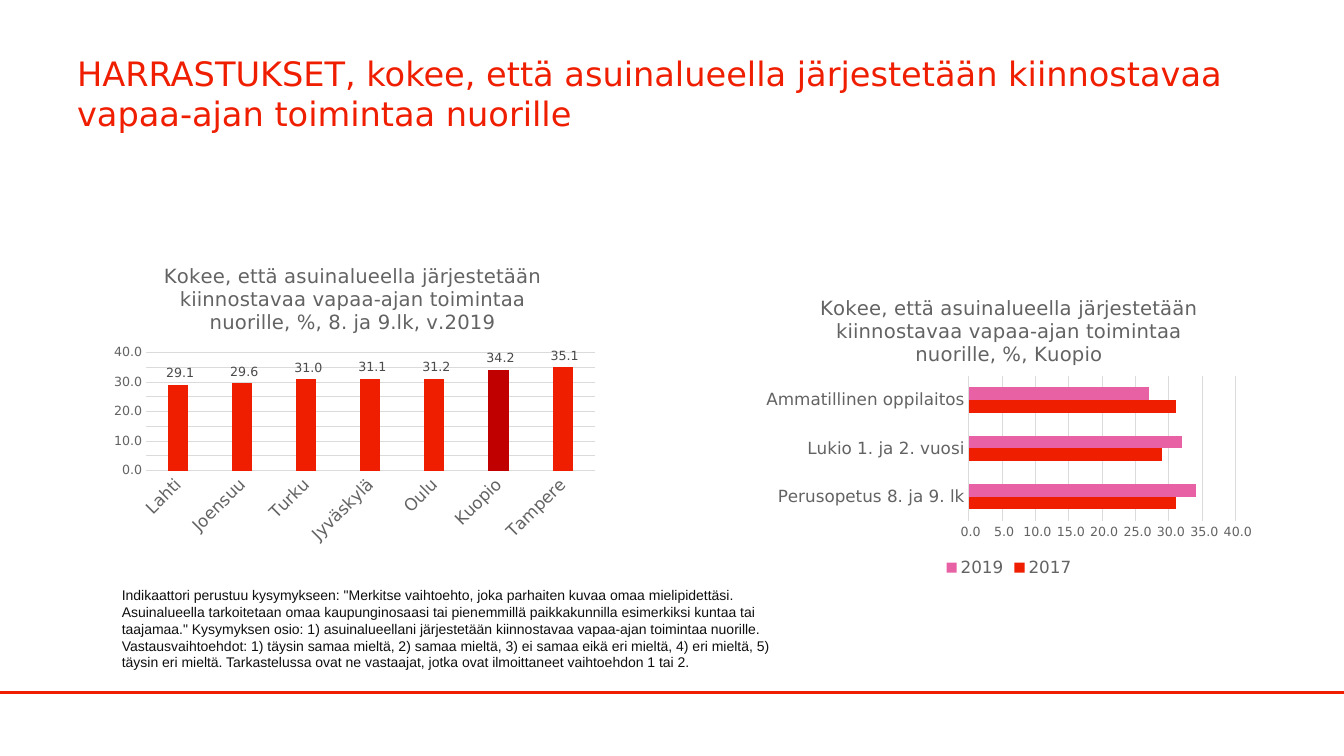
from pptx import Presentation
from pptx import util as u
from pptx.chart import data as chart_data
from pptx.dml.color import RGBColor
from pptx.enum import chart as kinds, shapes, text
from pptx.oxml import parse_xml
from pptx.oxml.ns import nsdecls

RED, DARK_RED, PINK = "F01E00", "C00000", "E961A5"
INK, GRAY, LABEL_GRAY, GRID_GRAY = "0F0F0F", "636363", "4B4B4B", "DBDBDB"
NUMBER = "#\\ ##0.0"

deck = Presentation()
deck.slide_width, deck.slide_height = u.Inches(13.33), u.Inches(7.5)
page = deck.slides.add_slide(deck.slide_layouts[6])
column, row = deck.slide_width / 40, deck.slide_height / 30


def place(left, top, width, height):
    """Turn grid columns and rows into slide lengths."""
    return [round(n) for n in (left * column, top * row, width * column, height * row)]


def style(target, color, size=None, name="DejaVu Sans"):
    """Colour a fill, or set colour, size and face of a font."""
    if size is None:
        target.solid()
        target.fore_color.rgb = RGBColor.from_string(color)
    else:
        target.size, target.name, target.bold = u.Pt(size), name, False
        style(target.fill, color)


# Footer rule
rule_y = round(27.48 * row)
rule = page.shapes.add_connector(
    shapes.MSO_CONNECTOR.STRAIGHT, 0, rule_y, deck.slide_width, rule_y)
style(rule.line.fill, RED)
rule.line.width = u.Pt(2)
rule.element.spPr.append(parse_xml(f"<a:effectLst {nsdecls('a')}/>"))

# Heading and explanatory note
texts = [
    ((2, 1.2, 36, 5), text.MSO_ANCHOR.MIDDLE, (RED, 24, "DejaVu Sans"),
     "HARRASTUKSET, kokee, että asuinalueella järjestetään kiinnostavaa "
     "vapaa-ajan toimintaa nuorille"),
    ((3.33, 23.08, 20, 3.76), text.MSO_ANCHOR.TOP, (INK, 10, "Arial"),
     "Indikaattori perustuu kysymykseen: \"Merkitse vaihtoehto, joka parhaiten kuvaa "
     "omaa mielipidettäsi. Asuinalueella tarkoitetaan omaa kaupunginosaasi tai "
     "pienemmillä paikkakunnilla esimerkiksi kuntaa tai taajamaa.\" Kysymyksen osio: "
     "1) asuinalueellani järjestetään kiinnostavaa vapaa-ajan toimintaa nuorille. "
     "Vastausvaihtoehdot: 1) täysin samaa mieltä, 2) samaa mieltä, 3) ei samaa eikä "
     "eri mieltä, 4) eri mieltä, 5) täysin eri mieltä. Tarkastelussa ovat ne "
     "vastaajat, jotka ovat ilmoittaneet vaihtoehdon 1 tai 2."),
]
for area, anchor, look, words in texts:
    box = page.shapes.add_textbox(*place(*area))
    box.text_frame.word_wrap = True
    box.text_frame.vertical_anchor = anchor
    box.text_frame.text = words
    style(box.text_frame.paragraphs[0].runs[0].font, *look)

# Charts: kind, area, title ending, gap, overlap, plot shares, categories, series
TITLE = "Kokee, että asuinalueella järjestetään kiinnostavaa vapaa-ajan toimintaa nuorille, %, "
charts = [
    (kinds.XL_CHART_TYPE.COLUMN_CLUSTERED, (3, 9.8, 15, 12), "8. ja 9.lk, v.2019",
     219, -27, (0.09, 0.35, 0.89, 0.39),
     ["Lahti", "Joensuu", "Turku", "Jyväskylä", "Oulu", "Kuopio", "Tampere"],
     [("Series 1", RED, [29.1, 29.6, 31, 31.1, 31.2, 34.2, 35.1])]),
    (kinds.XL_CHART_TYPE.BAR_CLUSTERED, (22.53, 11.08, 15, 12), "Kuopio",
     182, 0, (0.42, 0.32, 0.53, 0.48),
     ["Perusopetus 8. ja 9. lk", "Lukio 1. ja 2. vuosi", "Ammatillinen oppilaitos"],
     [("2017", RED, [31, 29, 31]), ("2019", PINK, [34, 32, 27])]),
]
drawn = []
for kind, area, ending, gap, overlap, shares, cities, series in charts:
    figures = chart_data.CategoryChartData(number_format=NUMBER)
    figures.categories = cities
    for name, color, values in series:
        figures.add_series(name, values)
    chart = page.shapes.add_chart(kind, *place(*area), figures).chart
    drawn.append(chart)
    style(chart.font, INK, 10)

    # Title
    chart.has_title = True
    chart.chart_title.include_in_layout = False
    chart.chart_title.text_frame.text = TITLE + ending
    style(chart.chart_title.text_frame.paragraphs[0].runs[0].font, GRAY, 14)

    # Bars
    plot = chart.plots[0]
    plot.vary_by_categories = False
    plot.gap_width, plot.overlap = gap, overlap
    for bars, (name, color, values) in zip(plot.series, series):
        style(bars.format.fill, color)
        bars.invert_if_negative = False

    # Axes
    for axis, size in ((chart.category_axis, 12), (chart.value_axis, 9)):
        axis.major_tick_mark = axis.minor_tick_mark = kinds.XL_TICK_MARK.NONE
        style(axis.tick_labels.font, GRAY, size)
    scale = chart.value_axis
    scale.minimum_scale, scale.maximum_scale, scale.major_unit = 0, 40, 5
    scale.tick_labels.number_format = NUMBER
    scale.tick_labels.number_format_is_linked = False
    scale.format.line.fill.background()
    scale.has_major_gridlines = True
    for line in (chart.category_axis.format.line, scale.major_gridlines.format.line):
        style(line.fill, GRID_GRAY)
        line.width = u.Pt(0.75)

    # Legend, only where there are several series
    chart.has_legend = len(series) > 1
    if chart.has_legend:
        chart.legend.position = kinds.XL_LEGEND_POSITION.BOTTOM
        chart.legend.include_in_layout = False
        style(chart.legend.font, GRAY, 12)

    # Plot area as shares of the chart
    area_xml = chart.element.xpath("c:chart/c:plotArea")[0]
    for layout in area_xml.xpath("c:layout"):
        area_xml.remove(layout)
    sides = "".join(f'<c:{key} val="{share}"/>' for key, share in zip("xywh", shares))
    area_xml.insert(0, parse_xml(
        f'<c:layout {nsdecls("c")}><c:manualLayout><c:layoutTarget val="inner"/>'
        f'<c:xMode val="edge"/><c:yMode val="edge"/>{sides}</c:manualLayout></c:layout>'))

# City chart: value labels, slanted names, Kuopio highlighted
city_bars = drawn[0].plots[0].series[0]
style(city_bars.points[5].format.fill, DARK_RED)
labels = city_bars.data_labels
labels.show_value = True
labels.position = kinds.XL_LABEL_POSITION.OUTSIDE_END
labels.number_format, labels.number_format_is_linked = NUMBER, False
style(labels.font, LABEL_GRAY, 9)
drawn[0].element.xpath("//c:catAx/c:txPr/a:bodyPr")[0].set("rot", "-2700000")

deck.save("out.pptx")
